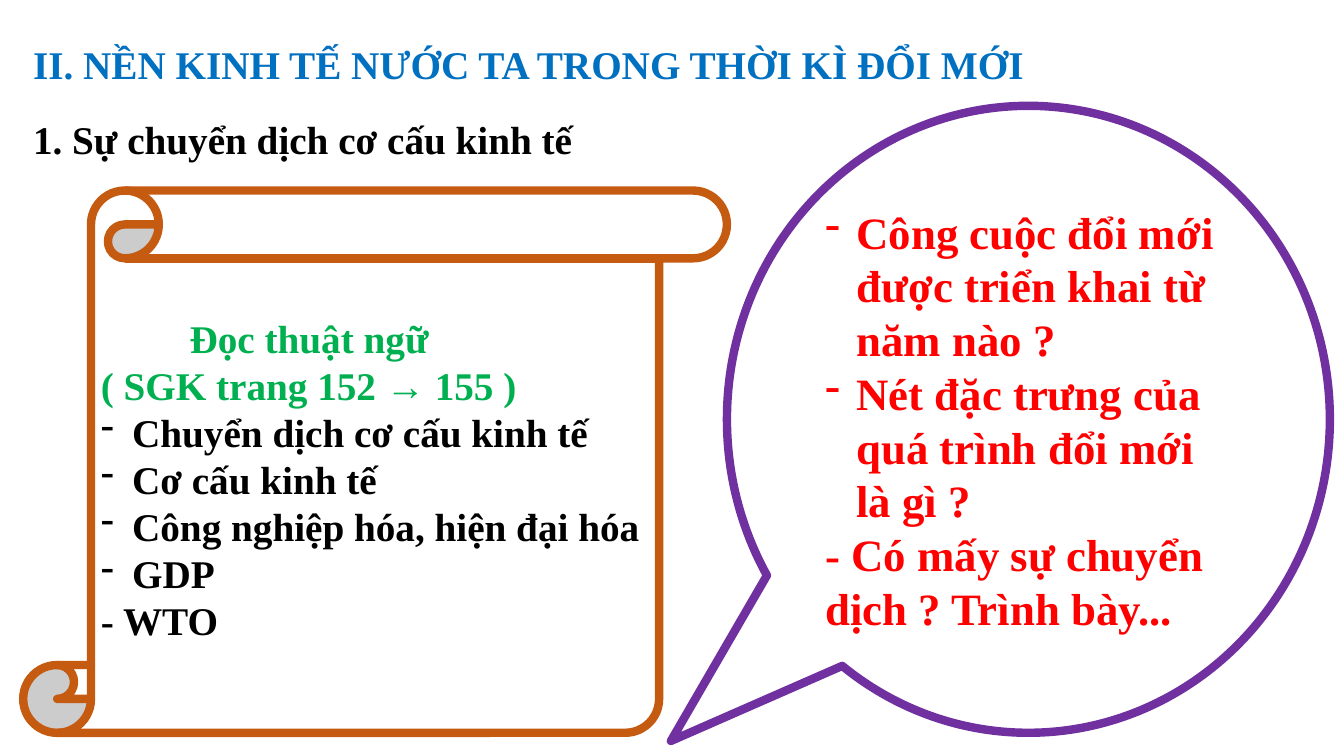
from pptx import Presentation
from pptx.dml.color import RGBColor
from pptx.enum.shapes import MSO_SHAPE
from pptx.enum.text import MSO_ANCHOR, PP_ALIGN
from pptx.oxml.ns import qn
from pptx.util import Inches, Pt
from lxml.etree import SubElement

FONT = "Times New Roman"
COLORS = {
    "white": "FFFFFF", "black": "000000", "blue": "0070C0", "green": "00B050",
    "red": "FF0000", "brown": "C55A11", "purple": "7030A0",
}


def color(name):
    """Return the named colour."""
    return RGBColor.from_string(COLORS[name])


def add_panel(slide, kind, box, line=None):
    """Place a white shape, outlined if a line colour is given."""
    panel = slide.shapes.add_shape(kind, *map(Inches, box))
    panel.shadow.inherit = False
    panel.fill.solid()
    panel.fill.fore_color.rgb = color("white")
    if line:
        panel.line.color.rgb = color(line)
        panel.line.width = Pt(6)
    else:
        panel.line.fill.background()
    return panel


def set_indent(para, left, first, bullet=False):
    """Set the margin and first-line indent, with an optional dash bullet."""
    props = para._p.get_or_add_pPr()
    props.set("marL", str(Inches(left)))
    props.set("indent", str(Inches(first)))
    if bullet:
        SubElement(props, qn("a:buFontTx"))
        SubElement(props, qn("a:buChar")).set("char", "-")


def write(panel, lines, size):
    """Fill a panel with (text, colour, bulleted) lines."""
    frame = panel.text_frame
    frame.word_wrap = True
    frame.vertical_anchor = MSO_ANCHOR.MIDDLE
    frame.text = "\n".join(text for text, _, _ in lines)
    for para, (_, hue, dash) in zip(frame.paragraphs, lines):
        para.alignment = PP_ALIGN.LEFT
        if dash:
            set_indent(para, 0.31, -0.31, True)
        for run in para.runs:
            run.font.name = FONT
            run.font.size = Pt(size)
            run.font.bold = True
            run.font.color.rgb = color(hue)


def add_heading(slide, box, text, hue):
    """Add a one-line heading."""
    write(add_panel(slide, MSO_SHAPE.RECTANGLE, box), [(text, hue, False)], 28)


def add_scroll(slide, box):
    """Add the scroll with the terms to read."""
    scroll = add_panel(slide, MSO_SHAPE.VERTICAL_SCROLL, box, "brown")
    write(scroll, [
        ("Đọc thuật ngữ", "green", False),
        ("( SGK trang 152 → 155 )", "green", False),
        ("Chuyển dịch cơ cấu kinh tế", "black", True),
        ("Cơ cấu kinh tế", "black", True),
        ("Công nghiệp hóa, hiện đại hóa", "black", True),
        ("GDP", "black", True),
        ("- WTO", "black", False),
    ], 28)
    set_indent(scroll.text_frame.paragraphs[0], 0, 0.88)


def add_bubble(slide, box):
    """Add the speech bubble with the questions."""
    bubble = add_panel(slide, MSO_SHAPE.OVAL_CALLOUT, box, "purple")
    bubble.adjustments[0] = -0.593
    bubble.adjustments[1] = 0.513
    write(bubble, [
        ("Công cuộc đổi mới được triển khai từ năm nào ?", "red", True),
        ("Nét đặc trưng của quá trình đổi mới là gì ?", "red", True),
        ("- Có mấy sự chuyển dịch ? Trình bày...", "red", False),
    ], 32)


def main():
    """Build and save the slide."""
    deck = Presentation()
    deck.slide_width = Inches(13.33)
    deck.slide_height = Inches(7.5)
    slide = deck.slides.add_slide(deck.slide_layouts[6])
    add_heading(slide, (0.23, 0.23, 12.31, 0.81),
                "II. NỀN KINH TẾ NƯỚC TA TRONG THỜI KÌ ĐỔI MỚI", "blue")
    add_heading(slide, (0.23, 1.05, 7.74, 0.65),
                "1. Sự chuyển dịch cơ cấu kinh tế", "black")
    add_scroll(slide, (0.23, 1.89, 6.98, 5.38))
    add_bubble(slide, (7.21, 1.05, 5.98, 6.22))
    deck.save("out.pptx")


if __name__ == "__main__":
    main()
